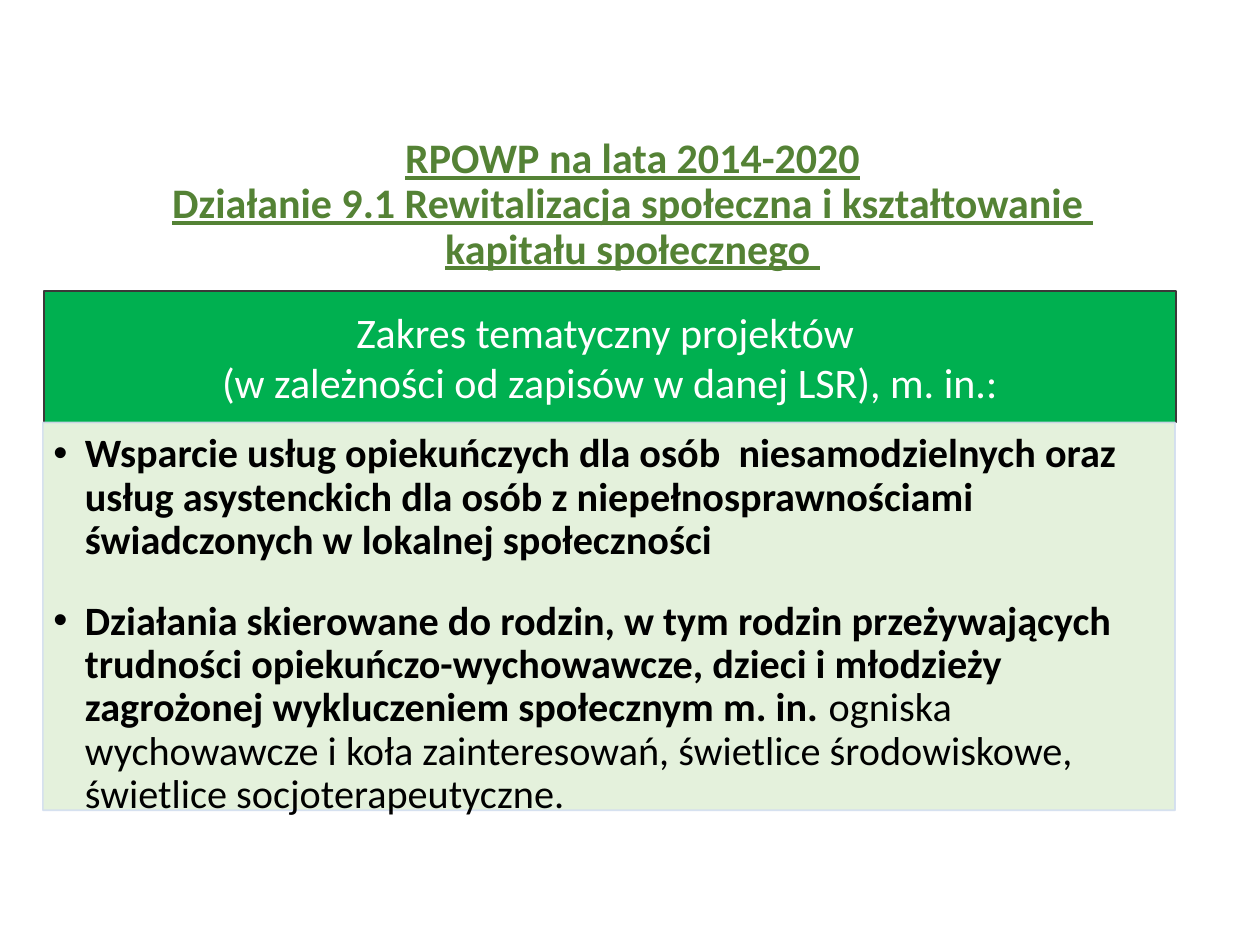
from lxml import etree
from pptx import Presentation
from pptx.dml.color import RGBColor
from pptx.enum.shapes import MSO_SHAPE as SHAPE
from pptx.enum.text import MSO_ANCHOR as ANCHOR, MSO_AUTO_SIZE as AUTO, PP_ALIGN as ALIGN
from pptx.oxml.ns import qn
from pptx.util import Pt

TITLE_GREEN = RGBColor(0x54, 0x82, 0x35)
HEADER_GREEN = RGBColor(0x00, 0xB0, 0x50)
HEADER_LINE = RGBColor(0x3B, 0x38, 0x38)
BODY_GREEN = RGBColor(0xE2, 0xF0, 0xD9)
BODY_LINE = RGBColor(0xD2, 0xDE, 0xEF)
WHITE = RGBColor(0xFF, 0xFF, 0xFF)
BLACK = RGBColor(0x00, 0x00, 0x00)

TITLE = ("RPOWP na lata 2014-2020\v"
         "Działanie 9.1 Rewitalizacja społeczna i kształtowanie \v"
         "kapitału społecznego ")
HEADER = ("Zakres tematyczny projektów \n"
          "(w zależności od zapisów w danej LSR), m. in.:")
SCOPE = [
    [("Wsparcie usług opiekuńczych dla osób  niesamodzielnych oraz usług "
      "asystenckich dla osób z niepełnosprawnościami świadczonych w lokalnej "
      "społeczności", True)],
    [("Działania skierowane do rodzin, w tym rodzin przeżywających trudności "
      "opiekuńczo-wychowawcze, dzieci i młodzieży zagrożonej wykluczeniem "
      "społecznym m. in. ", True),
     ("ogniska wychowawcze i koła zainteresowań, świetlice środowiskowe, "
      "świetlice socjoterapeutyczne.", False)],
]


def style_run(r, size, color, bold=False, underline=False):
    f = r.font
    f.name, f.size, f.bold, f.underline = "Calibri", Pt(size), bold, underline
    f.color.rgb = color


def set_alpha(fill, percent):
    clr = fill._xPr.find(qn("a:solidFill"))[0]
    etree.SubElement(clr, qn("a:alpha")).set("val", str(percent * 1000))


def add_bullet(p, indent):
    pPr = p._p.get_or_add_pPr()
    pPr.set("marL", str(Pt(indent)))
    pPr.set("indent", str(-Pt(indent)))
    etree.SubElement(pPr, qn("a:buFont")).set("typeface", "Arial")
    etree.SubElement(pPr, qn("a:buChar")).set("char", "•")


def add_panel(s, box, fill, line, insets, anchor):
    sp = s.shapes.add_shape(SHAPE.RECTANGLE, *map(Pt, box))
    sp.shadow.inherit = False
    sp.fill.solid()
    sp.fill.fore_color.rgb = fill
    sp.line.color.rgb = line
    sp.line.width = Pt(1)
    tf = sp.text_frame
    tf.word_wrap = True
    tf.vertical_anchor = anchor
    tf.margin_left, tf.margin_top, tf.margin_right, tf.margin_bottom = map(Pt, insets)
    return sp


def place_title(s, box):
    sp = s.shapes.title
    sp.left, sp.top, sp.width, sp.height = map(Pt, box)
    tf = sp.text_frame
    tf.auto_size = AUTO.NONE
    tf.vertical_anchor = ANCHOR.MIDDLE
    p = tf.paragraphs[0]
    p.text = TITLE
    p.alignment = ALIGN.CENTER
    p.line_spacing = 0.9
    for r in p.runs:
        style_run(r, 24, TITLE_GREEN, bold=True, underline=True)


def add_header(s, box):
    sp = add_panel(s, box, HEADER_GREEN, HEADER_LINE, (13.5, 8, 13.5, 8), ANCHOR.MIDDLE)
    sp.text_frame.text = HEADER
    for p in sp.text_frame.paragraphs:
        p.alignment = ALIGN.CENTER
        style_run(p.runs[0], 24, WHITE)


def add_scope(s, box):
    sp = add_panel(s, box, BODY_GREEN, BODY_LINE, (6, 6, 8, 9), ANCHOR.TOP)
    set_alpha(sp.fill, 90)
    set_alpha(sp.line.fill, 90)
    tf = sp.text_frame
    for i, parts in enumerate(SCOPE):
        p = tf.add_paragraph() if i else tf.paragraphs[0]
        p.alignment = ALIGN.LEFT
        p.line_spacing = 0.9
        if i:
            p.space_before = Pt(21)
        add_bullet(p, 18)
        for text, bold in parts:
            r = p.add_run()
            r.text = text
            style_run(r, 23, BLACK, bold)


def main():
    prs = Presentation()
    prs.slide_width, prs.slide_height = Pt(720), Pt(540)
    s = prs.slides.add_slide(prs.slide_layouts[5])
    place_title(s, (30, 88.5, 663, 57.5))
    add_header(s, (25, 166.5, 647, 75))
    add_scope(s, (24.5, 241.5, 647, 221.5))
    prs.save("out.pptx")


if __name__ == "__main__":
    main()
